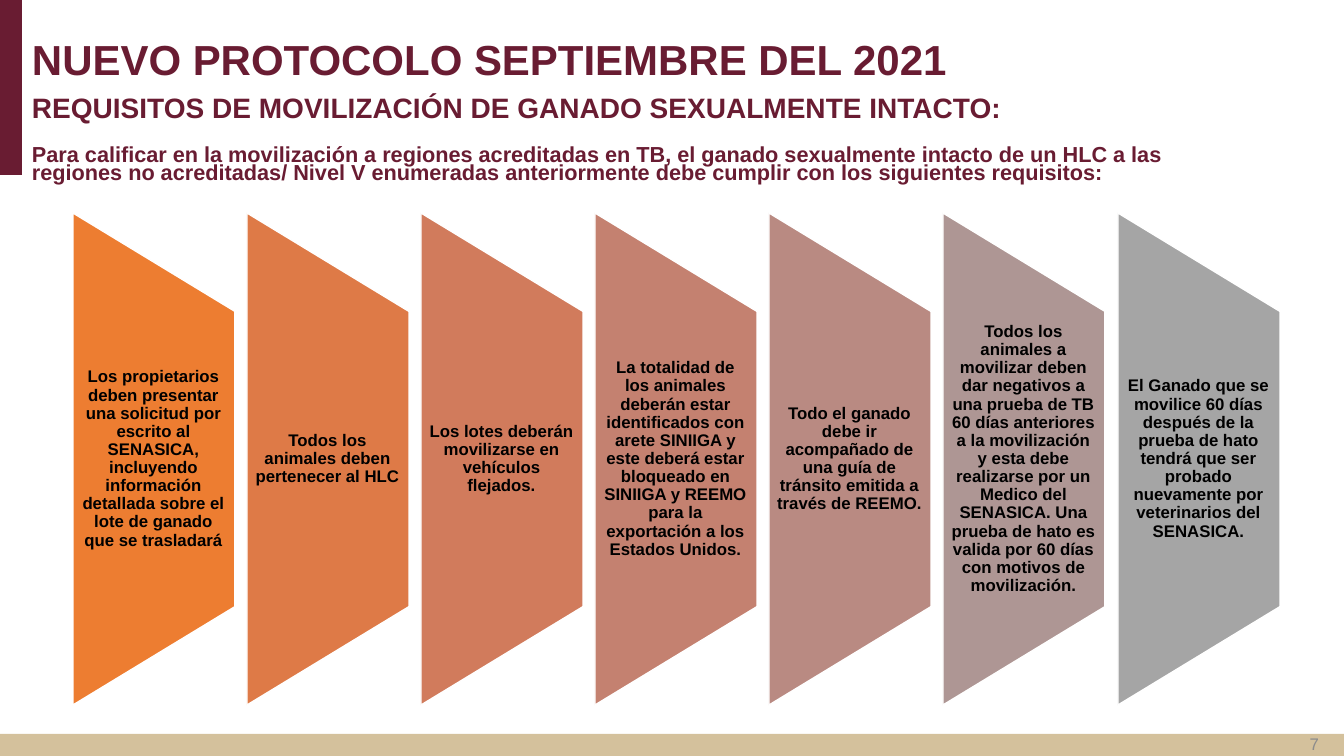
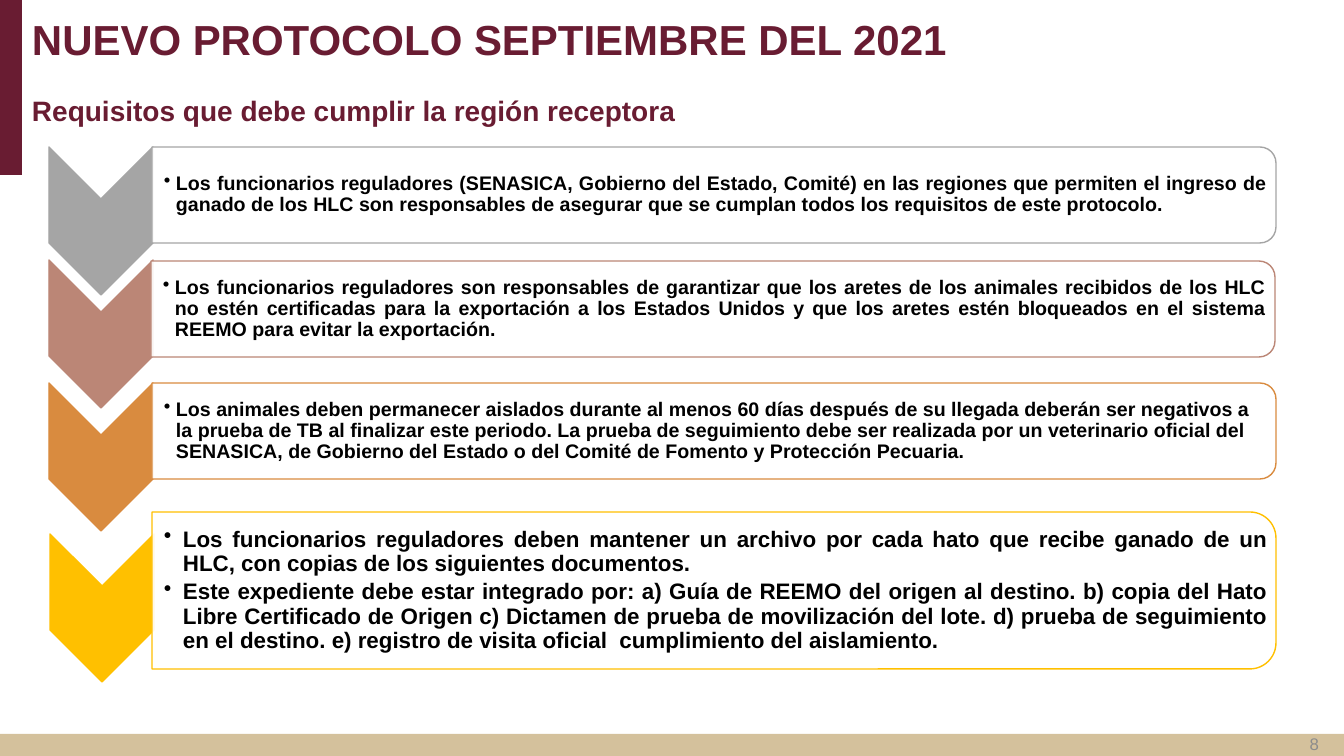
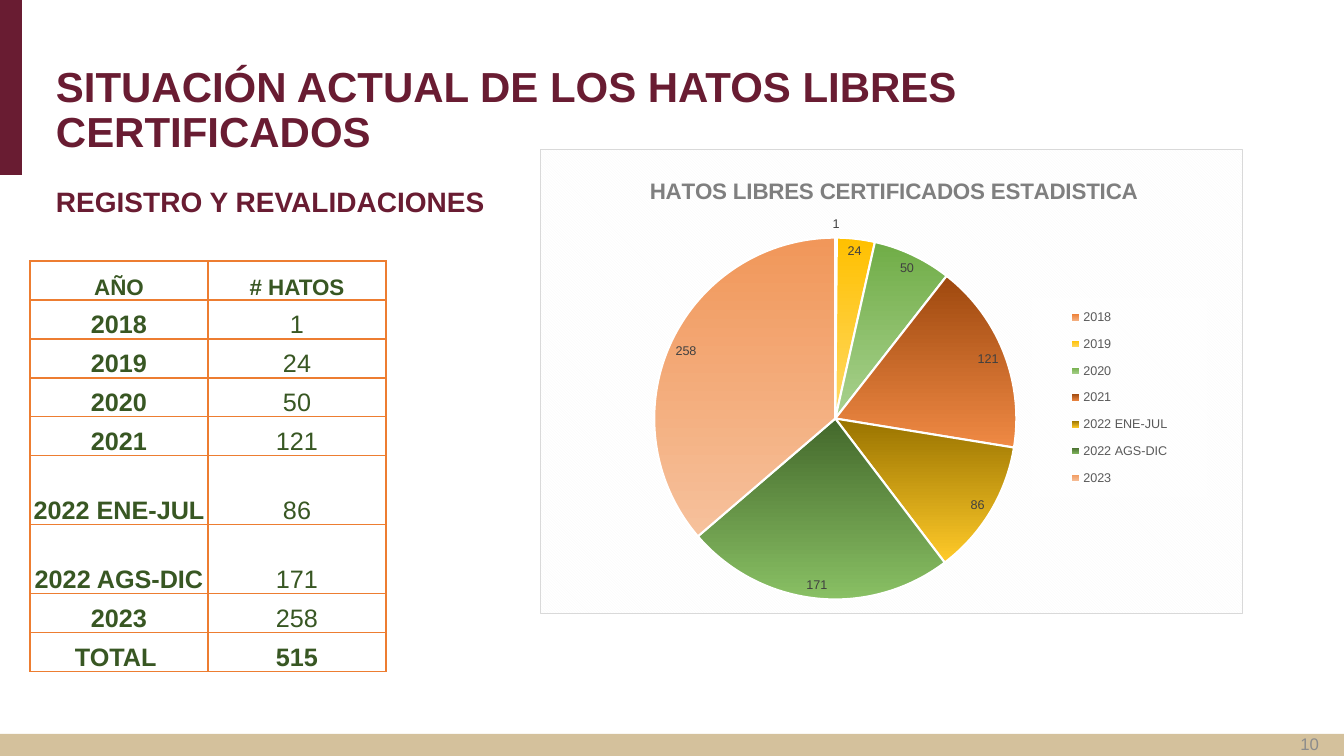
from lxml import etree
from pptx import Presentation
from pptx.chart.data import CategoryChartData
from pptx.dml.color import RGBColor
from pptx.enum.chart import XL_CHART_TYPE, XL_LABEL_POSITION as LABEL, XL_LEGEND_POSITION as LEGEND
from pptx.enum.shapes import MSO_SHAPE as SHAPE
from pptx.enum.text import MSO_ANCHOR as ANCHOR, PP_ALIGN as ALIGN
from pptx.oxml import parse_xml
from pptx.oxml.ns import nsdecls, qn
from pptx.util import Pt

PX = 914400 / 100.8
FONT = "Arial"
C = {
    "wine": "691C32", "sand": "D4C19C", "page": "8C8C8C", "black": "000000",
    "white": "FFFFFF", "gray": "A5A5A5", "rose": "BB8676", "ochre": "D98B3F",
    "gold": "FFC000", "orange": "ED7D31", "green": "385723",
    "title": "7F7F7F", "legend": "595959", "label": "404040",
}


def add_block(s, preset, box, fill, line=None, rot=0):
    """Shape that covers box (px) once it has been turned by rot."""
    x, y, w, h = box
    if rot in (90, 270):
        x, y, w, h = x + (w - h) / 2, y + (h - w) / 2, h, w
    sp = s.shapes.add_shape(preset, *[round(v * PX) for v in (x, y, w, h)])
    sp.rotation = rot
    sp.shadow.inherit = False
    sp.fill.solid()
    sp.fill.fore_color.rgb = RGBColor.from_string(fill)
    if line:
        sp.line.color.rgb = RGBColor.from_string(line)
        sp.line.width = Pt(1)
    else:
        sp.line.fill.background()
    return sp


def add_text(s, box, paras, size, color=C["wine"], bold=True, align=ALIGN.LEFT,
             anchor=ANCHOR.TOP, spacing=0.9, insets=(10, 5, 10, 5), indent=0):
    """Text box; an indent (px) makes its paragraphs bulleted."""
    tf = s.shapes.add_textbox(*[round(v * PX) for v in box]).text_frame
    tf.word_wrap = True
    tf.vertical_anchor = anchor
    tf.margin_left, tf.margin_top, tf.margin_right, tf.margin_bottom = [round(v * PX) for v in insets]
    for i, text in enumerate(paras):
        p = tf.paragraphs[0] if i == 0 else tf.add_paragraph()
        p.alignment = align
        p.line_spacing = spacing
        if indent:
            p.space_after = Pt(3)
            pPr = p._p.get_or_add_pPr()
            pPr.set("marL", str(round(indent * PX)))
            pPr.set("indent", str(round(-indent * PX)))
            etree.SubElement(pPr, qn("a:buChar")).set("char", "•")
        r = p.add_run()
        r.text = text
        r.font.name, r.font.size, r.font.bold = FONT, Pt(size), bold
        r.font.color.rgb = RGBColor.from_string(color)


prs = Presentation()
prs.slide_width, prs.slide_height = round(1344 * PX), round(756 * PX)

# Shared frame: bands, title, subtitle and page number
PROTOCOL = "NUEVO PROTOCOLO SEPTIEMBRE DEL 2021"
frames = [
    ("7", PROTOCOL, (22, 20, 1016, 84),
     "REQUISITOS DE MOVILIZACIÓN DE GANADO SEXUALMENTE INTACTO:", 89),
    ("8", PROTOCOL, (22, 0, 1016, 84), "Requisitos que debe cumplir la región receptora", 92),
    ("10", "SITUACIÓN ACTUAL DE LOS HATOS LIBRES CERTIFICADOS", (46, 54, 1016, 115),
     "REGISTRO Y REVALIDACIONES", 183),
]
slides = []
for number, title, title_box, subtitle, subtitle_top in frames:
    s = prs.slides.add_slide(prs.slide_layouts[6])
    add_block(s, SHAPE.RECTANGLE, (0, 734, 1344, 22), C["sand"])
    add_block(s, SHAPE.RECTANGLE, (0, 0, 22, 175), C["wine"])
    add_text(s, title_box, [title], 30, anchor=ANCHOR.MIDDLE)
    add_text(s, (title_box[0], subtitle_top, 1218, 64), [subtitle], 20)
    add_text(s, (1027, 724, 302, 40), [number], 12, C["page"], False,
             ALIGN.RIGHT, ANCHOR.MIDDLE, 1.0)
    slides.append(s)

# Slide 1: seven requirements in a row
s = slides[0]
add_text(s, (22, 143, 1218, 64), [
    "Para calificar en la movilización a regiones acreditadas en TB, el ganado sexualmente "
    "intacto de un HLC a las regiones no acreditadas/ Nivel V enumeradas anteriormente debe "
    "cumplir con los siguientes requisitos:"], 15.5, spacing=0.7)
requirements = [
    ("ED7D31", "Los propietarios deben presentar una solicitud por escrito al SENASICA, "
               "incluyendo información detallada sobre el lote de ganado que se trasladará"),
    ("DE7A47", "Todos los animales deben pertenecer al HLC"),
    ("D17B5C", "Los lotes deberán movilizarse en vehículos flejados."),
    ("C48170", "La totalidad de los animales deberán estar identificados con arete SINIIGA y "
               "este deberá estar bloqueado en SINIIGA y REEMO para la exportación a los "
               "Estados Unidos."),
    ("B98A82", "Todo el ganado debe ir acompañado de una guía de tránsito emitida a través "
               "de REEMO."),
    ("AE9694", "Todos los animales a movilizar deben dar negativos a una prueba de TB 60 días "
               "anteriores a la movilización y esta debe realizarse por un Medico del SENASICA. "
               "Una prueba de hato es valida por 60 días con motivos de movilización."),
    ("A5A5A5", "El Ganado que se movilice 60 días después de la prueba de hato tendrá que ser "
               "probado nuevamente por veterinarios del SENASICA."),
]
for i, (fill, text) in enumerate(requirements):
    x = 73 + i * 1045 // 6
    add_block(s, SHAPE.FLOWCHART_MANUAL_OPERATION, (x, 213, 162, 492), fill, C["white"], 270)
    add_text(s, (x, 311, 162, 296), [text], 12, C["black"], align=ALIGN.CENTER,
             anchor=ANCHOR.MIDDLE, insets=(8, 0, 9, 0))

# Slide 2: chevrons with the duties of the receiving region
s = slides[1]
# colour, chevron left and top, box left, top and height, size, indent, alignment, text
duties = [
    (C["gray"], 49, 147, 152, 147, 96, 14, 12, ALIGN.JUSTIFY, [
        "Los funcionarios reguladores (SENASICA, Gobierno del Estado, Comité) en las regiones "
        "que permiten el ingreso de ganado de los HLC son responsables de asegurar que se "
        "cumplan todos los requisitos de este protocolo."]),
    (C["rose"], 49, 260, 151, 261, 96, 14, 12, ALIGN.JUSTIFY, [
        "Los funcionarios reguladores son responsables de garantizar que los aretes de los "
        "animales recibidos de los HLC no estén certificadas para la exportación a los Estados "
        "Unidos y que los aretes estén bloqueados en el sistema REEMO para evitar la "
        "exportación."]),
    (C["ochre"], 49, 383, 152, 383, 96, 14, 12, ALIGN.LEFT, [
        "Los animales deben permanecer aislados durante al menos 60 días después de su llegada "
        "deberán ser negativos a la prueba de TB al finalizar este periodo. La prueba de "
        "seguimiento debe ser realizada por un veterinario oficial del SENASICA, de Gobierno "
        "del Estado o del Comité de Fomento y Protección Pecuaria."]),
    (C["gold"], 50, 534, 152, 512, 157, 16, 19, ALIGN.JUSTIFY, [
        "Los funcionarios reguladores deben mantener un archivo por cada hato que recibe ganado "
        "de un HLC, con copias de los siguientes documentos.",
        "Este expediente debe estar integrado por: a) Guía de REEMO del origen al destino. "
        "b) copia del Hato Libre Certificado de Origen c) Dictamen de prueba de movilización "
        "del lote. d) prueba de seguimiento en el destino. e) registro de visita oficial  "
        "cumplimiento del aislamiento."]),
]
for color, chev_x, chev_y, x, y, h, size, indent, align, paras in duties:
    add_block(s, SHAPE.CHEVRON, (chev_x, chev_y, 104, 148), color, color, 90)
    sp = add_block(s, SHAPE.ROUND_2_SAME_RECTANGLE, (x, y, 1124, h), C["white"], color, 90)
    rgb = sp._element.spPr.find(qn("a:solidFill"))[0]
    etree.SubElement(rgb, qn("a:alpha")).set("val", "90000")
    add_text(s, (x, y, 1117, h), paras, size, C["black"], align=align,
             anchor=ANCHOR.MIDDLE, insets=(12, 1, 1, 1), indent=indent)

# Slide 3: herds per year
s = slides[2]
herds = [
    ("2018", 1, "ED7D31", "F4B183"),
    ("2019", 24, "FFC000", "FFD966"),
    ("2020", 50, "70AD47", "A9D18E"),
    ("2021", 121, "9E480E", "EF8944"),
    ("2022 ENE-JUL", 86, "997300", "FFCA29"),
    ("2022 AGS-DIC", 171, "43682B", "89C064"),
    ("2023", 258, "F1975A", "F6C19C"),
]

# Table
rows = [("AÑO", "# HATOS")] + [(year, str(n)) for year, n, *_ in herds] + [("TOTAL ", "515")]
heights = [69 if text.startswith("2022") else 39 for text, _ in rows]
table = s.shapes.add_table(len(rows), 2, *[round(v * PX) for v in (30, 261, 356, sum(heights))]).table
table.first_row = table.horz_banding = False
for col in table.columns:
    col.width = round(178 * PX)
for i, row in enumerate(rows):
    table.rows[i].height = round(heights[i] * PX)
    for j, text in enumerate(row):
        cell = table.cell(i, j)
        cell.margin_left = cell.margin_top = cell.margin_right = round(PX)
        cell.margin_bottom = 0
        cell.vertical_anchor = ANCHOR.BOTTOM
        p = cell.text_frame.paragraphs[0]
        p.alignment = ALIGN.CENTER
        r = p.add_run()
        r.text = text
        r.font.name, r.font.size = FONT, Pt(16 if i == 0 else 18)
        r.font.bold = j == 0 or i in (0, len(rows) - 1)
        r.font.color.rgb = RGBColor.from_string(C["green"])
        tcPr = cell._tc.get_or_add_tcPr()
        for side in ("lnL", "lnR", "lnT", "lnB"):
            tcPr.append(parse_xml(
                f'<a:{side} {nsdecls("a")} w="12700"><a:solidFill>'
                f'<a:srgbClr val="{C["orange"]}"/></a:solidFill></a:{side}>'))
        cell.fill.background()

# Pie chart
data = CategoryChartData()
data.categories = [year for year, *_ in herds]
data.add_series("HATOS", [n for _, n, *_ in herds])
chart = s.shapes.add_chart(XL_CHART_TYPE.PIE, *[round(v * PX) for v in (540, 149, 703, 465)], data).chart
chart.font.name, chart.font.size = FONT, Pt(10)
chart.has_title = True
r = chart.chart_title.text_frame.paragraphs[0].add_run()
r.text = "HATOS LIBRES CERTIFICADOS ESTADISTICA"
r.font.name, r.font.size, r.font.bold = FONT, Pt(16), True
r.font.color.rgb = RGBColor.from_string(C["title"])
chart.has_legend = True
legend = chart.legend
legend.position = LEGEND.RIGHT
legend.include_in_layout = False
legend.font.name, legend.font.size = FONT, Pt(9)
legend.font.color.rgb = RGBColor.from_string(C["legend"])

plot = chart.plots[0]
plot.vary_by_categories = True
plot.has_data_labels = True
labels = plot.data_labels
labels.show_value = True
labels.position = LABEL.BEST_FIT
labels.font.name, labels.font.size = FONT, Pt(9)
labels.font.color.rgb = RGBColor.from_string(C["label"])
for i, (_, _, top, bottom) in enumerate(herds):
    fmt = plot.series[0].points[i].format
    fmt.fill.gradient()
    fmt.fill.gradient_angle = 270
    for stop, color in zip(fmt.fill.gradient_stops, (top, bottom)):
        stop.color.rgb = RGBColor.from_string(color)
    fmt.line.color.rgb = RGBColor.from_string(C["white"])
    fmt.line.width = Pt(1.5)

# Places of the chart parts, as shares of the chart
root = chart.element
layouts = [
    ("c:title", "c:tx", dict(x=0.15, y=0.05)),
    ("c:plotArea", None, dict(x=0.16, y=0.19, w=0.52, h=0.78)),
    ("c:legend", "c:legendPos", dict(x=0.7, y=0.32, w=0.25, h=0.43)),
]
for tag, before, place in layouts:
    part = root.find(qn("c:chart")).find(qn(tag))
    for old in part.findall(qn("c:layout")):
        part.remove(old)
    inner = '<c:layoutTarget val="inner"/>' if tag == "c:plotArea" else ""
    modes = '<c:xMode val="edge"/><c:yMode val="edge"/>'
    values = "".join(f'<c:{key} val="{value}"/>' for key, value in place.items())
    layout = parse_xml(f'<c:layout {nsdecls("c")}><c:manualLayout>{inner}{modes}{values}'
                       '</c:manualLayout></c:layout>')
    part.insert(part.index(part.find(qn(before))) + 1 if before else 0, layout)

# Chart and legend backgrounds
root.find(qn("c:chart")).addnext(parse_xml(
    f'<c:spPr {nsdecls("c", "a")}><a:pattFill prst="dkDnDiag">'
    '<a:fgClr><a:srgbClr val="FFFFFF"><a:alpha val="20000"/></a:srgbClr></a:fgClr>'
    '<a:bgClr><a:srgbClr val="E6E6E6"/></a:bgClr></a:pattFill>'
    '<a:ln w="9525"><a:solidFill><a:srgbClr val="D9D9D9"/></a:solidFill></a:ln></c:spPr>'))
legend._element.find(qn("c:overlay")).addnext(parse_xml(
    f'<c:spPr {nsdecls("c", "a")}><a:solidFill><a:srgbClr val="FFFFFF">'
    '<a:alpha val="50000"/></a:srgbClr></a:solidFill></c:spPr>'))

prs.save("out.pptx")
